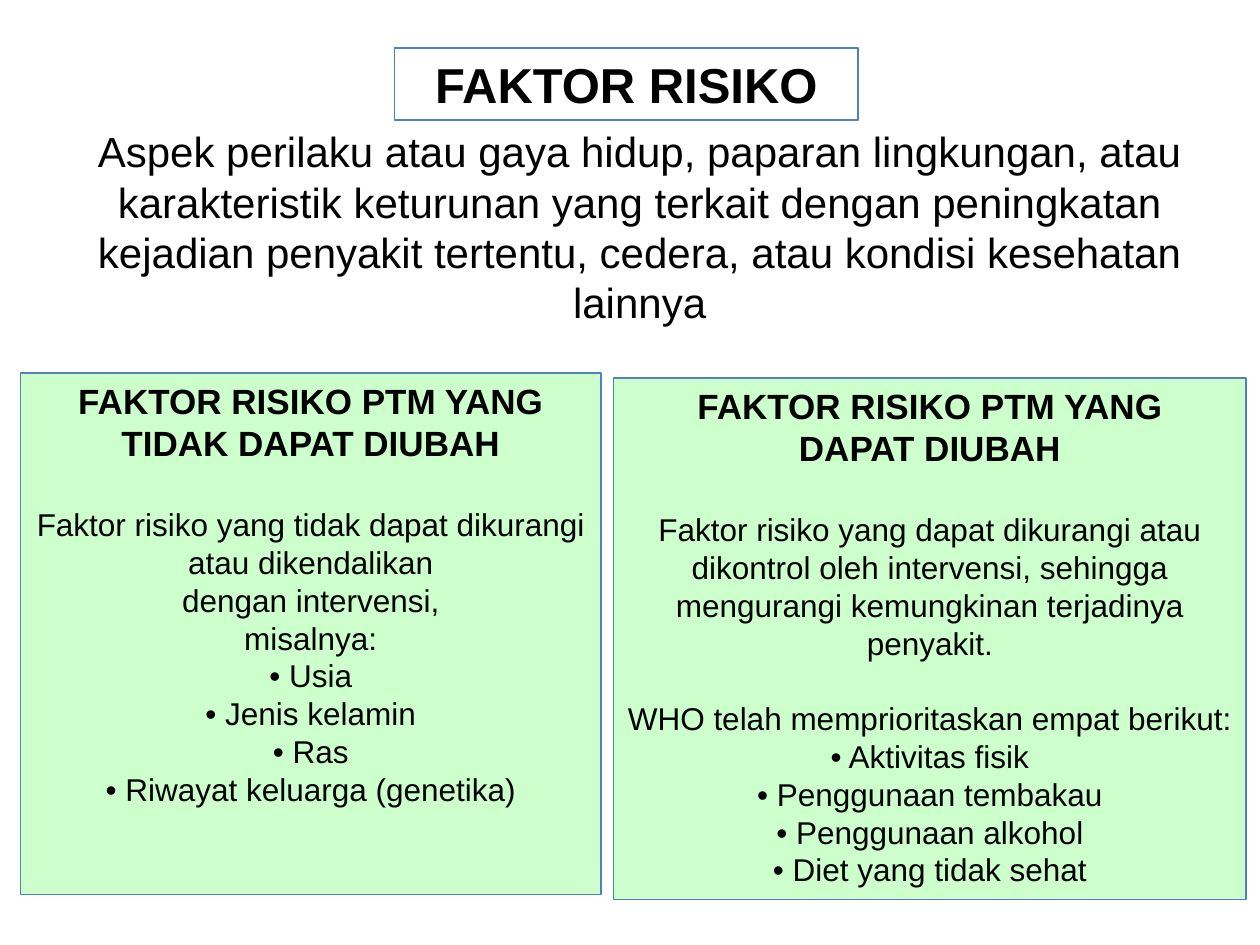
"""Build the slide that defines risk factors and compares their two kinds."""
import pptx
import pptx.dml.color
import pptx.enum.shapes
import pptx.enum.text
import pptx.util

Cm = pptx.util.Cm
Pt = pptx.util.Pt
COLORS = {"text": "000000", "panel": "CCFFCC", "border": "4F81BD"}
LINE_HEIGHT = 1.2


def rgb(name):
    return pptx.dml.color.RGBColor.from_string(COLORS[name])


def write(frame, text, size=18, bold=False, gap=0):
    started = bool(frame.paragraphs[0].runs)
    paragraph = frame.add_paragraph() if started else frame.paragraphs[0]
    paragraph.alignment = pptx.enum.text.PP_ALIGN.CENTER
    paragraph.line_spacing = Pt(size * LINE_HEIGHT)
    paragraph.space_before = Pt(gap * LINE_HEIGHT)
    run = paragraph.add_run()
    run.text = text
    run.font.name = "Arial"
    run.font.size = Pt(size)
    run.font.bold = bold
    run.font.color.rgb = rgb("text")


presentation = pptx.Presentation()
presentation.slide_width = Cm(25.4)
presentation.slide_height = Cm(19.05)
slide = presentation.slides.add_slide(presentation.slide_layouts[6])

definition = slide.shapes.add_textbox(Cm(1.07), Cm(2.41), Cm(23.65), Cm(3.33))
definition.text_frame.word_wrap = True
write(
    definition.text_frame,
    "Aspek perilaku atau gaya hidup, paparan lingkungan, atau karakteristik "
    "keturunan yang terkait dengan peningkatan kejadian penyakit tertentu, "
    "cedera, atau kondisi kesehatan lainnya",
    size=24,
)

title = [("FAKTOR RISIKO", {"size": 28, "bold": True})]
changeable = [
    ("FAKTOR RISIKO PTM YANG", {"size": 20, "bold": True}),
    ("DAPAT DIUBAH", {"size": 20, "bold": True}),
    ("Faktor risiko yang dapat dikurangi atau dikontrol oleh intervensi, "
     "sehingga mengurangi kemungkinan terjadinya penyakit.", {"gap": 20}),
    ("WHO telah memprioritaskan empat berikut:", {"gap": 18}),
    ("• Aktivitas fisik", {}),
    ("• Penggunaan tembakau", {}),
    ("• Penggunaan alkohol", {}),
    ("• Diet yang tidak sehat", {}),
]
unchangeable = [
    ("FAKTOR RISIKO PTM YANG", {"size": 20, "bold": True}),
    ("TIDAK DAPAT DIUBAH", {"size": 20, "bold": True}),
    ("Faktor risiko yang tidak dapat dikurangi atau dikendalikan", {"gap": 20}),
    ("dengan intervensi,", {}),
    ("misalnya:", {}),
    ("• Usia", {}),
    ("• Jenis kelamin", {}),
    ("• Ras", {}),
    ("• Riwayat keluarga (genetika)", {}),
]
boxes = [
    (7.95, 0.97, 9.35, 1.45, None, title),
    (12.37, 7.62, 12.75, 10.52, "panel", changeable),
    (0.41, 7.52, 11.71, 10.52, "panel", unchangeable),
]

for left, top, width, height, fill, lines in boxes:
    shape = slide.shapes.add_shape(
        pptx.enum.shapes.MSO_SHAPE.RECTANGLE,
        Cm(left), Cm(top), Cm(width), Cm(height),
    )
    shape.shadow.inherit = False
    if fill:
        shape.fill.solid()
        shape.fill.fore_color.rgb = rgb(fill)
    else:
        shape.fill.background()
    shape.line.color.rgb = rgb("border")
    shape.line.width = Pt(0.75)
    shape.text_frame.word_wrap = True
    shape.text_frame.vertical_anchor = pptx.enum.text.MSO_ANCHOR.TOP
    for text, text_format in lines:
        write(shape.text_frame, text, **text_format)

presentation.save("out.pptx")
